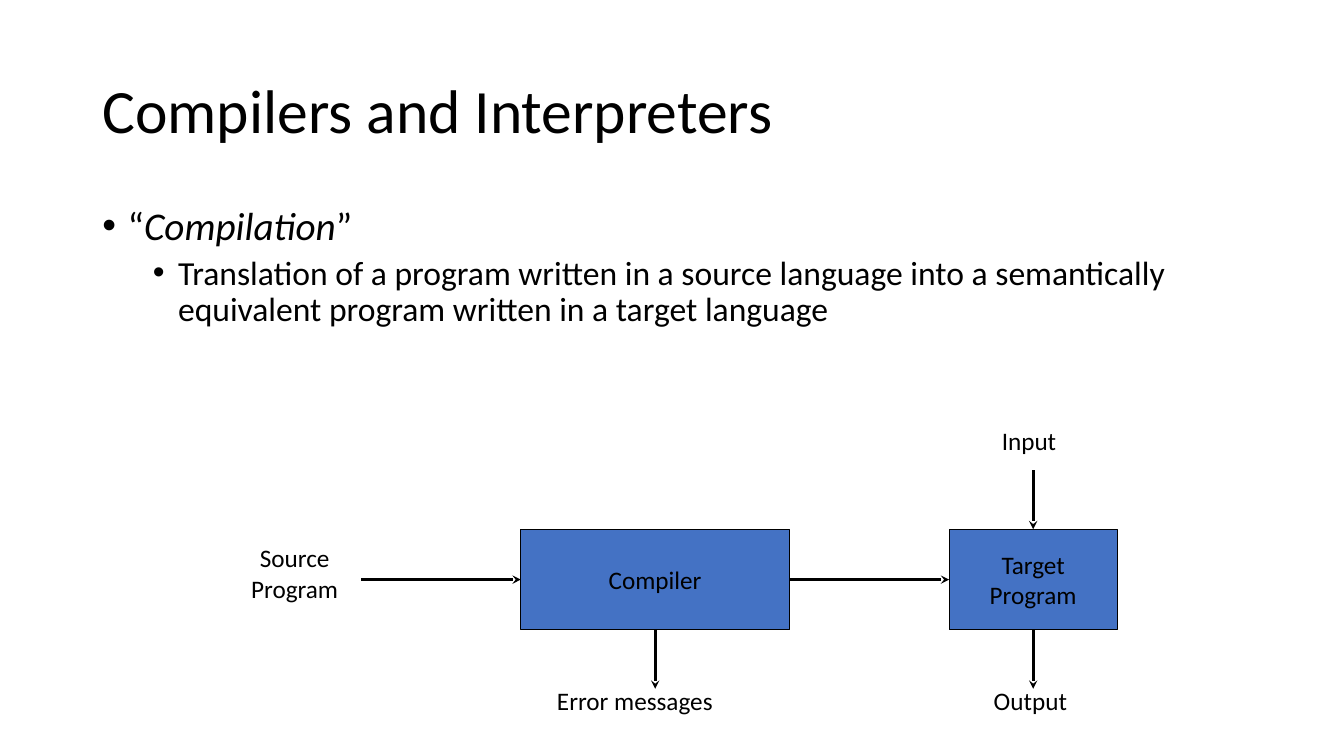
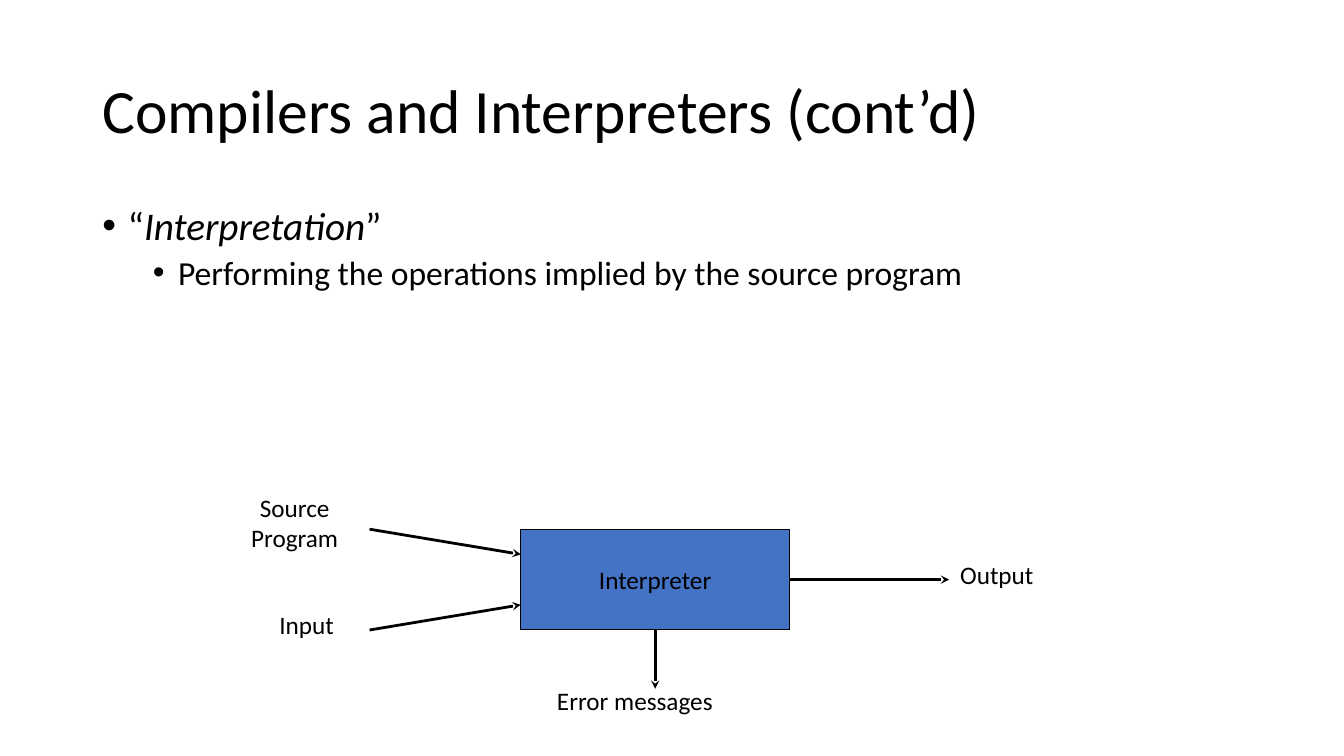
from lxml.etree import SubElement
from pptx import Presentation
from pptx.dml.color import RGBColor
from pptx.enum.shapes import MSO_CONNECTOR, MSO_SHAPE
from pptx.enum.text import MSO_ANCHOR, MSO_AUTO_SIZE, PP_ALIGN
from pptx.oxml.ns import qn
from pptx.util import Pt

COLORS = {"text": "000000", "line": "000000", "box": "4472C4"}
FONT = "Calibri"
TITLE_AREA = (66, 29, 828, 104)
BODY_AREA = (66, 144, 828, 343)
# Per list level: text size, left indent, space before
LEVELS = [(28, 18, 10), (24, 54, 5)]
HANGING = 18

# Parts that both diagrams share
MAIN_BOX = (372, 378, 192, 72)
ERROR_LABEL = ("Error messages", 390, 486, 127, 29)
SHARED_ARROWS = [(468, 450, 468, 492), (564, 414, 678, 414)]

SLIDES = [
    {
        "title": "Compilers and Interpreters",
        "term": "Compilation",
        "meaning": "Translation of a program written in a source language into "
                   "a semantically equivalent program written in a target language",
        "boxes": [("Compiler", *MAIN_BOX), ("Target\nProgram", 678, 378, 120, 72)],
        "labels": [("Source\nProgram", 172, 384, 77, 51),
                   ("Input", 708, 300, 54, 29),
                   ("Output", 702, 486, 68, 29)],
        "arrows": [(258, 414, 372, 414), (738, 450, 738, 492), (738, 336, 738, 378)],
    },
    {
        "title": "Compilers and Interpreters (cont’d)",
        "term": "Interpretation",
        "meaning": "Performing the operations implied by the source program",
        "boxes": [("Interpreter", *MAIN_BOX)],
        "labels": [("Source\nProgram", 172, 348, 77, 51),
                   ("Input", 192, 432, 54, 29),
                   ("Output", 678, 396, 68, 29)],
        "arrows": [(264, 378, 372, 396), (264, 450, 372, 432)],
    },
]


def place(shape, area):
    shape.left, shape.top, shape.width, shape.height = map(Pt, area)


def format_text(p, size, align):
    p.alignment = align
    for r in p.runs:
        r.font.size = Pt(size)
        r.font.name = FONT
        r.font.color.rgb = RGBColor.from_string(COLORS["text"])


prs = Presentation()
prs.slide_width, prs.slide_height = Pt(960), Pt(540)

for content in SLIDES:
    s = prs.slides.add_slide(prs.slide_layouts[1])

    title = s.shapes.title
    place(title, TITLE_AREA)
    tf = title.text_frame
    tf.text = content["title"]
    tf.vertical_anchor = MSO_ANCHOR.MIDDLE
    tf.auto_size = MSO_AUTO_SIZE.NONE
    tf.paragraphs[0].line_spacing = 0.9
    format_text(tf.paragraphs[0], 44, PP_ALIGN.LEFT)

    body = s.placeholders[1]
    place(body, BODY_AREA)
    tf = body.text_frame
    tf.auto_size = MSO_AUTO_SIZE.NONE
    for piece in ("“", content["term"], "”"):
        r = tf.paragraphs[0].add_run()
        r.text = piece
        r.font.italic = piece == content["term"]
    tf.add_paragraph().text = content["meaning"]
    for level, (p, (size, indent, before)) in enumerate(zip(tf.paragraphs, LEVELS)):
        p.level = level
        p.line_spacing = 0.9
        p.space_before = Pt(before)
        format_text(p, size, PP_ALIGN.LEFT)
        pPr = p._p.get_or_add_pPr()
        pPr.set("marL", str(Pt(indent)))
        pPr.set("indent", str(-Pt(HANGING)))
        SubElement(pPr, qn("a:buFont")).set("typeface", "Arial")
        SubElement(pPr, qn("a:buChar")).set("char", "•")

    for text, *area in content["boxes"]:
        sp = s.shapes.add_shape(MSO_SHAPE.RECTANGLE, *map(Pt, area))
        sp.shadow.inherit = False
        sp.fill.solid()
        sp.fill.fore_color.rgb = RGBColor.from_string(COLORS["box"])
        sp.line.color.rgb = RGBColor.from_string(COLORS["line"])
        sp.line.width = Pt(0.75)
        tf = sp.text_frame
        tf.text = text
        tf.word_wrap = False
        tf.vertical_anchor = MSO_ANCHOR.MIDDLE
        for p in tf.paragraphs:
            format_text(p, 18, PP_ALIGN.CENTER)

    for text, *area in [*content["labels"], ERROR_LABEL]:
        tf = s.shapes.add_textbox(*map(Pt, area)).text_frame
        tf.text = text
        tf.word_wrap = False
        tf.auto_size = MSO_AUTO_SIZE.SHAPE_TO_FIT_TEXT
        for p in tf.paragraphs:
            format_text(p, 18, PP_ALIGN.CENTER)

    for ends in content["arrows"] + SHARED_ARROWS:
        arrow = s.shapes.add_connector(MSO_CONNECTOR.STRAIGHT, *map(Pt, ends))
        arrow.line.color.rgb = RGBColor.from_string(COLORS["line"])
        arrow.line.width = Pt(2)
        SubElement(arrow.line._get_or_add_ln(), qn("a:tailEnd")).set("type", "stealth")
        SubElement(arrow._element.spPr, qn("a:effectLst"))

prs.save("out.pptx")
